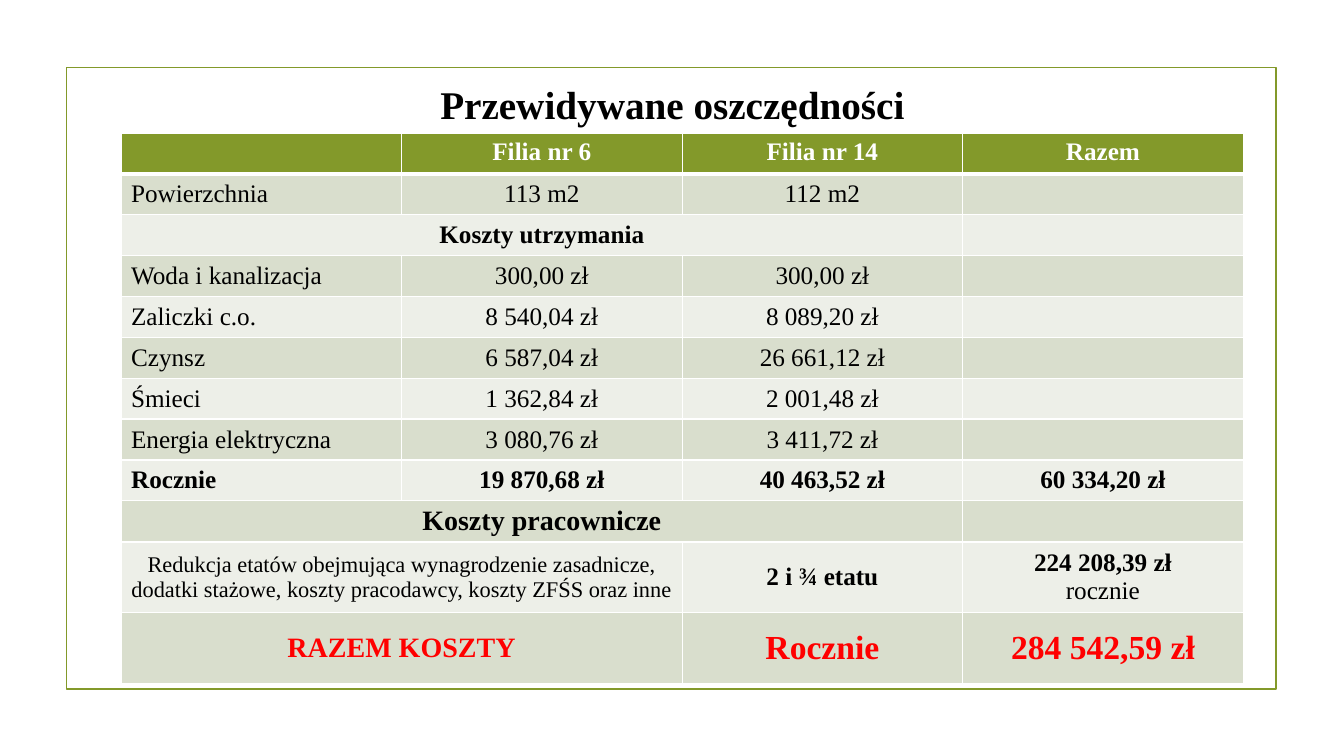
from dataclasses import dataclass

from lxml import etree
from pptx import Presentation
from pptx.dml.color import RGBColor
from pptx.enum.shapes import MSO_SHAPE
from pptx.enum.text import MSO_ANCHOR, PP_ALIGN
from pptx.oxml.ns import qn
from pptx.util import Cm, Pt


@dataclass(frozen=True)
class Theme:
    font: str = "Times New Roman"
    green: str = "83992A"
    dark_band: str = "D9DECD"
    light_band: str = "EDEFE8"
    white: str = "FFFFFF"
    black: str = "000000"
    red: str = "FF0000"
    title: int = 28
    total: int = 24
    section: int = 20
    body: int = 18
    note: int = 16


theme = Theme()


def style_paragraph(paragraph, size, color, bold, align=PP_ALIGN.CENTER):
    paragraph.alignment = align
    font = paragraph.font
    font.name = theme.font
    font.size = Pt(size)
    font.bold = bold
    font.color.rgb = RGBColor.from_string(color)


def add_borders(cell, bottom_width):
    properties = cell._tc.get_or_add_tcPr()
    for side, width in (("L", 1), ("R", 1), ("T", 1), ("B", bottom_width)):
        line = etree.SubElement(properties, qn(f"a:ln{side}"), w=str(Pt(width)))
        fill = etree.SubElement(line, qn("a:solidFill"))
        etree.SubElement(fill, qn("a:srgbClr"), val=theme.white)


rows = [
    ["", "Filia nr 6", "Filia nr 14", "Razem"],
    ["Powierzchnia", "113 m2", "112 m2", ""],
    ["Koszty utrzymania", "", "", ""],
    ["Woda i kanalizacja", "300,00 zł", "300,00 zł", ""],
    ["Zaliczki c.o.", "8 540,04 zł", "8 089,20 zł", ""],
    ["Czynsz", "6 587,04 zł", "26 661,12 zł", ""],
    ["Śmieci", "1 362,84 zł", "2 001,48 zł", ""],
    ["Energia elektryczna", "3 080,76 zł", "3 411,72 zł", ""],
    ["Rocznie", "19 870,68 zł", "40 463,52 zł", "60 334,20 zł"],
    ["Koszty pracownicze", "", "", ""],
    [
        "Redukcja etatów obejmująca wynagrodzenie zasadnicze, "
        "dodatki stażowe, koszty pracodawcy, koszty ZFŚS oraz inne",
        "", "2 i ¾ etatu", "224 208,39 zł\nrocznie",
    ],
    ["RAZEM KOSZTY", "", "Rocznie", "284 542,59 zł"],
]
MAINTENANCE, ANNUAL, STAFF, REDUCTION, TOTAL = 2, 8, 9, 10, 11
last_merged_column = {MAINTENANCE: 2, STAFF: 2, REDUCTION: 1, TOTAL: 1}
bold_rows = {0, MAINTENANCE, ANNUAL, STAFF, REDUCTION, TOTAL}
text_colors = {0: theme.white, TOTAL: theme.red}
sizes = {
    (STAFF, 0): theme.section,
    (REDUCTION, 0): theme.note,
    (TOTAL, 0): theme.section,
    (TOTAL, 2): theme.total,
    (TOTAL, 3): theme.total,
}

presentation = Presentation()
presentation.slide_width = Cm(33.87)
presentation.slide_height = Cm(19.05)
slide = presentation.slides.add_slide(presentation.slide_layouts[6])

frame = slide.shapes.add_shape(
    MSO_SHAPE.RECTANGLE, Cm(1.68), Cm(1.7), Cm(30.48), Cm(15.67)
)
frame.shadow.inherit = False
frame.fill.background()
frame.line.color.rgb = RGBColor.from_string(theme.green)
frame.line.width = Pt(1.25)

table = slide.shapes.add_table(
    len(rows), 4, Cm(3.05), Cm(3.35), Cm(28.28), Cm(13.86)
).table
for column in table.columns:
    column.width = Cm(7.07)

for row_index, texts in enumerate(rows):
    table.rows[row_index].height = Cm(1.78 if row_index >= REDUCTION else 1.03)
    if row_index == 0:
        band = theme.green
    else:
        band = theme.dark_band if row_index % 2 else theme.light_band
    if row_index in last_merged_column:
        table.cell(row_index, 0).merge(
            table.cell(row_index, last_merged_column[row_index])
        )
    for column_index, text in enumerate(texts):
        cell = table.cell(row_index, column_index)
        cell.text = text
        cell.vertical_anchor = MSO_ANCHOR.MIDDLE if row_index else MSO_ANCHOR.TOP
        add_borders(cell, 1 if row_index else 3)
        cell.fill.solid()
        cell.fill.fore_color.rgb = RGBColor.from_string(band)
        is_label = column_index == 0 and row_index not in last_merged_column
        is_note = (row_index, column_index) == (REDUCTION, 0)
        for paragraph_index, paragraph in enumerate(cell.text_frame.paragraphs):
            style_paragraph(
                paragraph,
                sizes.get((row_index, column_index), theme.body),
                text_colors.get(row_index, theme.black),
                row_index in bold_rows and not is_note and paragraph_index == 0,
                PP_ALIGN.LEFT if is_label else PP_ALIGN.CENTER,
            )

title = slide.shapes.add_textbox(Cm(8.74), Cm(1.9), Cm(16.41), Cm(1.45))
title.text_frame.word_wrap = True
title.text_frame.text = "Przewidywane oszczędności"
style_paragraph(title.text_frame.paragraphs[0], theme.title, theme.black, True)

presentation.save("out.pptx")
